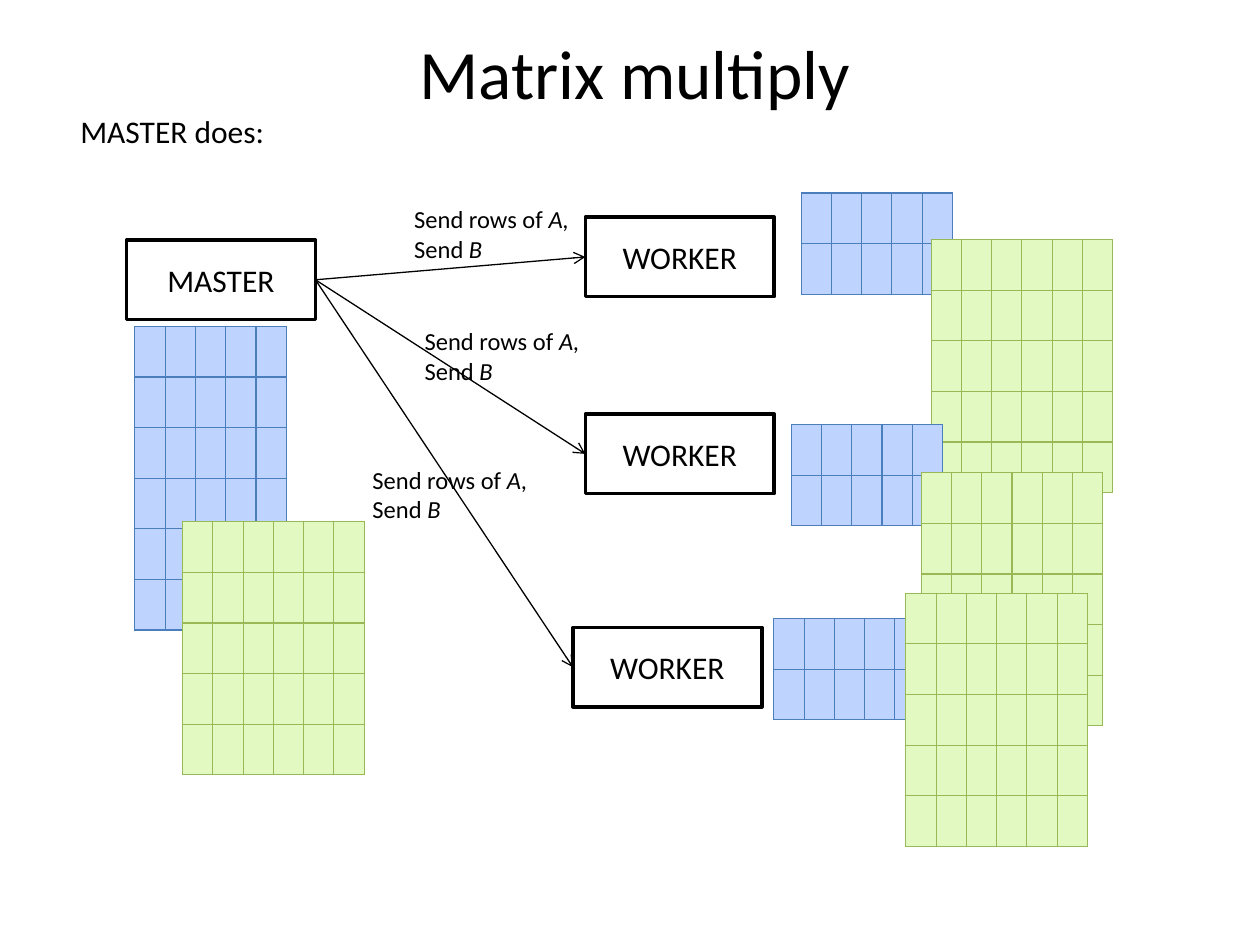
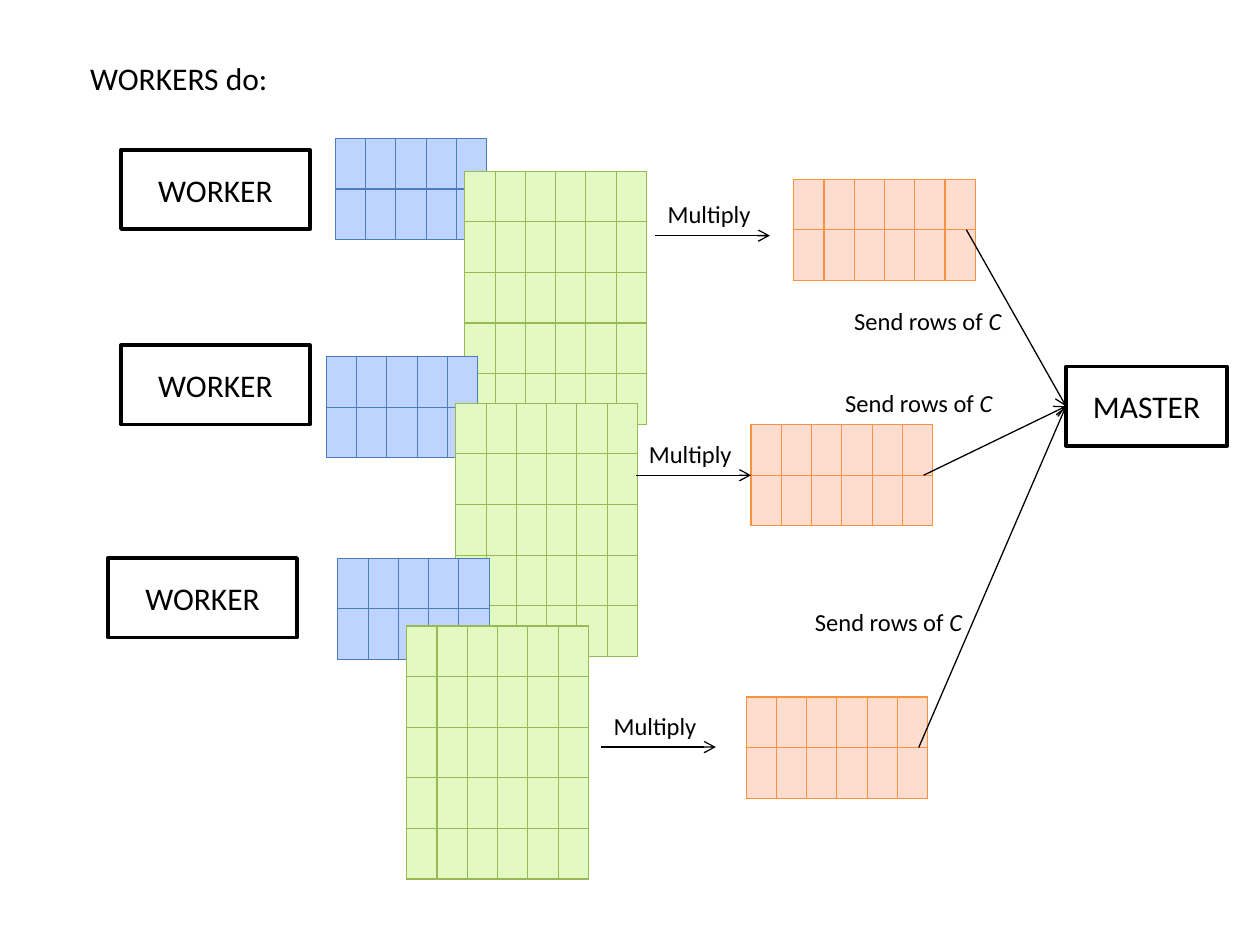
from dataclasses import dataclass

from lxml import etree
from pptx import Presentation
from pptx.dml.color import RGBColor
from pptx.enum.shapes import MSO_CONNECTOR, MSO_SHAPE
from pptx.enum.text import MSO_ANCHOR, PP_ALIGN
from pptx.oxml.ns import qn
from pptx.util import Cm, Pt

RECT = MSO_SHAPE.RECTANGLE
STRAIGHT = MSO_CONNECTOR.STRAIGHT
MIDDLE = MSO_ANCHOR.MIDDLE
TOP = MSO_ANCHOR.TOP
CENTER = PP_ALIGN.CENTER
LEFT = PP_ALIGN.LEFT

FONT = "Calibri"
BLACK = "000000"
WHITE = "FFFFFF"
COL, ROW = 0.61, 1.02
BOX_WIDTH, BOX_HEIGHT = 3.81, 1.6
EDGE = 3.48
STEP = 2.31
LEFT_SITE, RIGHT_SITE = 1, 3


@dataclass(frozen=True)
class Kind:
    rows: int
    cols: int
    fill: str
    line: str


@dataclass(frozen=True)
class Grid:
    kind: Kind
    x: float
    y: float


@dataclass(frozen=True)
class Box:
    text: str
    x: float
    y: float
    width: float = BOX_WIDTH


@dataclass(frozen=True)
class Label:
    lines: tuple
    x: float
    y: float
    width: float
    height: float
    size: float = 14
    wrap: bool = False
    anchor: object = TOP
    align: object = LEFT


FULL_A = Kind(6, 5, "BFD3FF", "4B7EBC")
ROWS_A = Kind(2, 5, "BFD3FF", "4B7EBC")
FULL_B = Kind(5, 6, "E2FAC2", "98B955")
ROWS_C = Kind(2, 6, "FFDDCE", "F69240")

SEND_AB = (("Send rows of ", "A,"), ("Send", " B"))
SEND_C = (("Send rows of ", "C"),)
TIMES = (("Multiply", ""),)

TITLE = Label((("Matrix multiply", ""),), 1.37, 0.76, 22.86, 1.37, 39.6, True, MIDDLE, CENTER)

MASTER = Box("MASTER", 2.55, 4.84)
WORKERS = (
    Box("WORKER", 11.8, 4.38),
    Box("WORKER", 11.8, 8.35),
    Box("WORKER", 11.55, 12.65),
)
SENT_GRIDS = (
    Grid(FULL_A, 2.72, 6.58),
    Grid(FULL_B, 3.68, 10.52),
    Grid(ROWS_A, 16.15, 3.89),
    Grid(FULL_B, 18.77, 4.83),
    Grid(ROWS_A, 15.95, 8.56),
    Grid(FULL_B, 18.57, 9.53),
    Grid(ROWS_A, 15.6, 12.47),
    Grid(FULL_B, 18.26, 11.96),
)
SEND_SPOTS = ((8.1, 3.99), (8.31, 6.45), (7.26, 9.25))

HOME = Box("MASTER", 21.49, 7.39, 3.25)
CREW = (
    Box("WORKER", 2.44, 3.02),
    Box("WORKER", 2.44, 6.96),
    Box("WORKER", 2.18, 11.25),
)
WORK_GRIDS = (
    Grid(ROWS_A, 6.76, 2.79),
    Grid(FULL_B, 9.37, 3.45),
    Grid(ROWS_A, 6.58, 7.19),
    Grid(FULL_B, 9.19, 8.13),
    Grid(ROWS_A, 6.81, 11.25),
    Grid(FULL_B, 8.2, 12.62),
)
DONE_GRIDS = (
    Grid(ROWS_C, 16, 3.61),
    Grid(ROWS_C, 15.14, 8.56),
    Grid(ROWS_C, 15.04, 14.05),
)
TIMES_SPOTS = ((13.21, 4.75), (12.83, 9.58), (12.12, 15.06))
BACK_SPOTS = ((16.97, 6.05), (16.79, 7.7), (16.18, 12.12))


def tint(code: str) -> RGBColor:
    return RGBColor.from_string(code)


def style_run(run, size: float, slant: bool = False) -> None:
    run.font.name = FONT
    run.font.size = Pt(size)
    run.font.italic = slant
    run.font.color.rgb = tint(BLACK)


def draw_box(slide, box: Box):
    shape = slide.shapes.add_shape(
        RECT, Cm(box.x), Cm(box.y), Cm(box.width), Cm(BOX_HEIGHT)
    )
    shape.shadow.inherit = False
    shape.fill.solid()
    shape.fill.fore_color.rgb = tint(WHITE)
    shape.line.color.rgb = tint(BLACK)
    shape.line.width = Pt(2)
    frame = shape.text_frame
    frame.vertical_anchor = MIDDLE
    frame.text = box.text
    frame.paragraphs[0].alignment = CENTER
    style_run(frame.paragraphs[0].runs[0], 18)
    return shape


def draw_label(slide, label: Label) -> None:
    shape = slide.shapes.add_textbox(
        Cm(label.x), Cm(label.y), Cm(label.width), Cm(label.height)
    )
    frame = shape.text_frame
    frame.word_wrap = label.wrap
    frame.vertical_anchor = label.anchor
    for index, (plain, slant) in enumerate(label.lines):
        para = frame.add_paragraph() if index else frame.paragraphs[0]
        para.text = plain
        para.alignment = label.align
        style_run(para.runs[0], label.size)
        if slant:
            run = para.add_run()
            run.text = slant
            style_run(run, label.size, True)


def draw_heading(slide, text: str, x: float, y: float) -> None:
    draw_label(slide, Label(((text, ""),), x, y, 5.7, 1.02, 18, True))


def draw_arrow(slide, start: tuple = (0, 0), end: tuple = (0, 0)):
    line = slide.shapes.add_connector(STRAIGHT, *map(Cm, start + end))
    line.line.color.rgb = tint(BLACK)
    line.line.width = Pt(0.75)
    etree.SubElement(line.line._get_or_add_ln(), qn("a:tailEnd"), type="arrow")
    etree.SubElement(line._element.spPr, qn("a:effectLst"))
    return line


def edge_cell(cell, code: str) -> None:
    props = cell._tc.get_or_add_tcPr()
    for index, side in enumerate(("lnL", "lnR", "lnT", "lnB")):
        edge = etree.Element(qn(f"a:{side}"), w=str(Pt(0.75)))
        fill = etree.SubElement(edge, qn("a:solidFill"))
        etree.SubElement(fill, qn("a:srgbClr"), val=code)
        props.insert(index, edge)


def draw_grid(slide, grid: Grid) -> None:
    kind = grid.kind
    table = slide.shapes.add_table(
        kind.rows, kind.cols, Cm(grid.x), Cm(grid.y),
        Cm(COL * kind.cols), Cm(ROW * kind.rows),
    ).table
    table.first_row = False
    table.horz_banding = False
    for col in table.columns:
        col.width = Cm(COL)
    for row in table.rows:
        row.height = Cm(ROW)
    for cell in table.iter_cells():
        cell.margin_left = cell.margin_right = 0
        cell.margin_top = cell.margin_bottom = 0
        cell.fill.solid()
        cell.fill.fore_color.rgb = tint(kind.fill)
        edge_cell(cell, kind.line)


def draw_send(slide) -> None:
    master = draw_box(slide, MASTER)
    for box in WORKERS:
        worker = draw_box(slide, box)
        arrow = draw_arrow(slide)
        arrow.begin_connect(master, RIGHT_SITE)
        arrow.end_connect(worker, LEFT_SITE)
    for x, y in SEND_SPOTS:
        draw_label(slide, Label(SEND_AB, x, y, 3.66, 1.45))
    for grid in SENT_GRIDS:
        draw_grid(slide, grid)
    draw_heading(slide, "MASTER does:", 1.37, 2.13)
    draw_label(slide, TITLE)


def draw_work(slide) -> None:
    for box in CREW:
        draw_box(slide, box)
    for grid in WORK_GRIDS + DONE_GRIDS:
        draw_grid(slide, grid)
    draw_heading(slide, "WORKERS do:", 1.57, 1.07)
    for x, y in TIMES_SPOTS:
        draw_label(slide, Label(TIMES, x, y - 0.86, STEP, 0.86))
        draw_arrow(slide, (x, y), (x + STEP, y))
    home = draw_box(slide, HOME)
    for grid in DONE_GRIDS:
        arrow = draw_arrow(slide, (grid.x + EDGE, grid.y + ROW))
        arrow.end_connect(home, LEFT_SITE)
    for x, y in BACK_SPOTS:
        draw_label(slide, Label(SEND_C, x, y, 3.63, 0.86))


def main() -> None:
    deck = Presentation()
    deck.slide_width = Cm(25.4)
    deck.slide_height = Cm(19.05)
    blank = deck.slide_layouts[6]
    for draw in (draw_send, draw_work):
        draw(deck.slides.add_slide(blank))
    deck.save("out.pptx")


if __name__ == "__main__":
    main()
